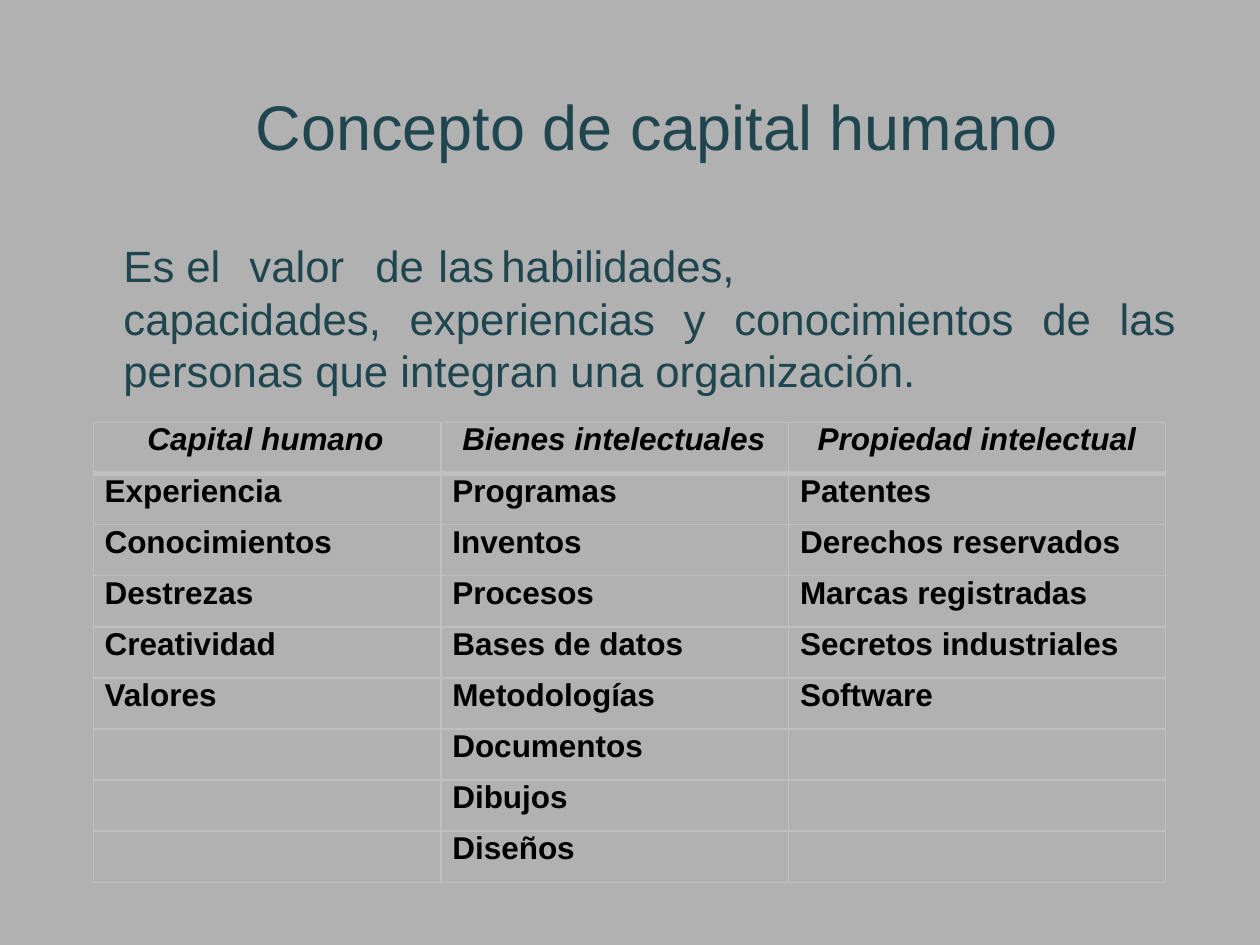
from itertools import zip_longest

from lxml import etree
from pptx import Presentation
from pptx import util as u
from pptx.dml.color import RGBColor
from pptx.enum import text
from pptx.oxml import ns

TITLE = "Concepto de capital humano"
DEFINITION = ("Es\tel\tvalor\tde\tlas\thabilidades,\v"
              "capacidades, experiencias y conocimientos de las "
              "personas que integran una organización.")
TAB_STOPS = (1.14, 2.15, 3.63, 4.76, 5.94)
CAPITAL = {
    "Capital humano": ["Experiencia", "Conocimientos", "Destrezas", "Creatividad", "Valores"],
    "Bienes intelectuales": ["Programas", "Inventos", "Procesos", "Bases de datos",
                             "Metodologías", "Documentos", "Dibujos", "Diseños"],
    "Propiedad intelectual": ["Patentes", "Derechos reservados", "Marcas registradas",
                              "Secretos industriales", "Software"],
}


def color(value):
    return RGBColor.from_string(value)


def assign(target, values):
    for name, value in values.items():
        setattr(target, name, value)


class SlideBuilder:
    """Hold the style and the current slide, and add each kind of element."""

    ink, black, border, backdrop = "1F464F", "000000", "C0C0C0", "B1B1B1"
    title_font = {"name": "Arial", "size": u.Pt(36)}
    body_font = {"name": "Arial", "size": u.Pt(25)}
    cell_font = {"name": "Arial", "size": u.Pt(18), "bold": True}

    def __init__(self, presentation):
        self.width, self.height = presentation.slide_width, presentation.slide_height
        self.slide = presentation.slides.add_slide(presentation.slide_layouts[1])
        fill = self.slide.background.fill
        fill.solid()
        fill.fore_color.rgb = color(self.backdrop)

    def box(self, left, top, width, height):
        return {"left": int(left * self.width), "top": int(top * self.height),
                "width": int(width * self.width), "height": int(height * self.height)}

    def style_text(self, paragraph, font, ink):
        assign(paragraph.font, font)
        paragraph.font.color.rgb = color(ink)

    def placeholder(self, index, content, area, frame_format, paragraph_format):
        shape = self.slide.placeholders[index]
        assign(shape, self.box(*area))
        frame = shape.text_frame
        margins = dict.fromkeys(("margin_left", "margin_top", "margin_right", "margin_bottom"), 0)
        assign(frame, {**margins, "word_wrap": True,
                       "auto_size": text.MSO_AUTO_SIZE.NONE, **frame_format})
        frame.text = content
        paragraph = frame.paragraphs[0]
        assign(paragraph, {"space_before": u.Pt(0), **paragraph_format})
        return paragraph

    def title(self, content, area):
        paragraph = self.placeholder(
            0, content, area,
            {"margin_left": u.Inches(1.06), "vertical_anchor": text.MSO_ANCHOR.MIDDLE},
            {"alignment": text.PP_ALIGN.LEFT})
        self.style_text(paragraph, self.title_font, self.ink)

    def body(self, content, area, tab_stops):
        paragraph = self.placeholder(
            1, content, area,
            {"margin_left": u.Inches(0.01), "vertical_anchor": text.MSO_ANCHOR.TOP},
            {"alignment": text.PP_ALIGN.JUSTIFY, "line_spacing": u.Pt(30)})
        properties = paragraph._p.get_or_add_pPr()
        properties.set("marL", "0")
        properties.set("indent", "0")
        etree.SubElement(properties, ns.qn("a:buNone"))
        tabs = etree.SubElement(properties, ns.qn("a:tabLst"))
        for stop in tab_stops:
            etree.SubElement(tabs, ns.qn("a:tab"), pos=str(u.Inches(stop)), algn="l")
        self.style_text(paragraph, self.body_font, self.ink)

    def borders(self, cell, weights):
        properties = cell._tc.get_or_add_tcPr()
        for position, (side, weight) in enumerate(zip("LRTB", weights)):
            line = etree.Element(ns.qn(f"a:ln{side}"), w=str(u.Pt(weight)))
            fill = etree.SubElement(line, ns.qn("a:solidFill"))
            etree.SubElement(fill, ns.qn("a:srgbClr"), val=self.border)
            properties.insert(position, line)

    def table(self, columns, area, widths, header_indents, indent):
        rows = [tuple(columns), *zip_longest(*columns.values(), fillvalue="")]
        box = self.box(*area)
        table = self.slide.shapes.add_table(len(rows), len(columns), **box).table
        assign(table, {"first_row": False, "horz_banding": False})
        for column, width in zip(table.columns, widths):
            column.width = int(width * self.width)
        for row_index, row in enumerate(rows):
            table.rows[row_index].height = box["height"] // len(rows)
            header = row_index == 0
            for column_index, content in enumerate(row):
                cell = table.cell(row_index, column_index)
                left = header_indents[column_index] if header else indent
                assign(cell, {"margin_left": u.Inches(left), "margin_top": 0,
                              "margin_right": 0, "margin_bottom": 0, "text": content})
                cell.fill.background()
                self.borders(cell, (1, 1, 3 if row_index == 1 else 1, 3 if header else 1))
                self.style_text(cell.text_frame.paragraphs[0],
                                {**self.cell_font, "italic": header}, self.black)


def main():
    presentation = Presentation()
    assign(presentation, {"slide_width": u.Inches(10), "slide_height": u.Inches(7.5)})
    builder = SlideBuilder(presentation)
    builder.title(TITLE, (0.097, 0.052, 0.806, 0.161))
    builder.body(DEFINITION, (0.097, 0.253, 0.836, 0.168), TAB_STOPS)
    builder.table(CAPITAL, (0.074, 0.447, 0.851, 0.487), (0.276, 0.276, 0.299),
                  (0.43, 0.17, 0.23), 0.09)
    presentation.save("out.pptx")


if __name__ == "__main__":
    main()
